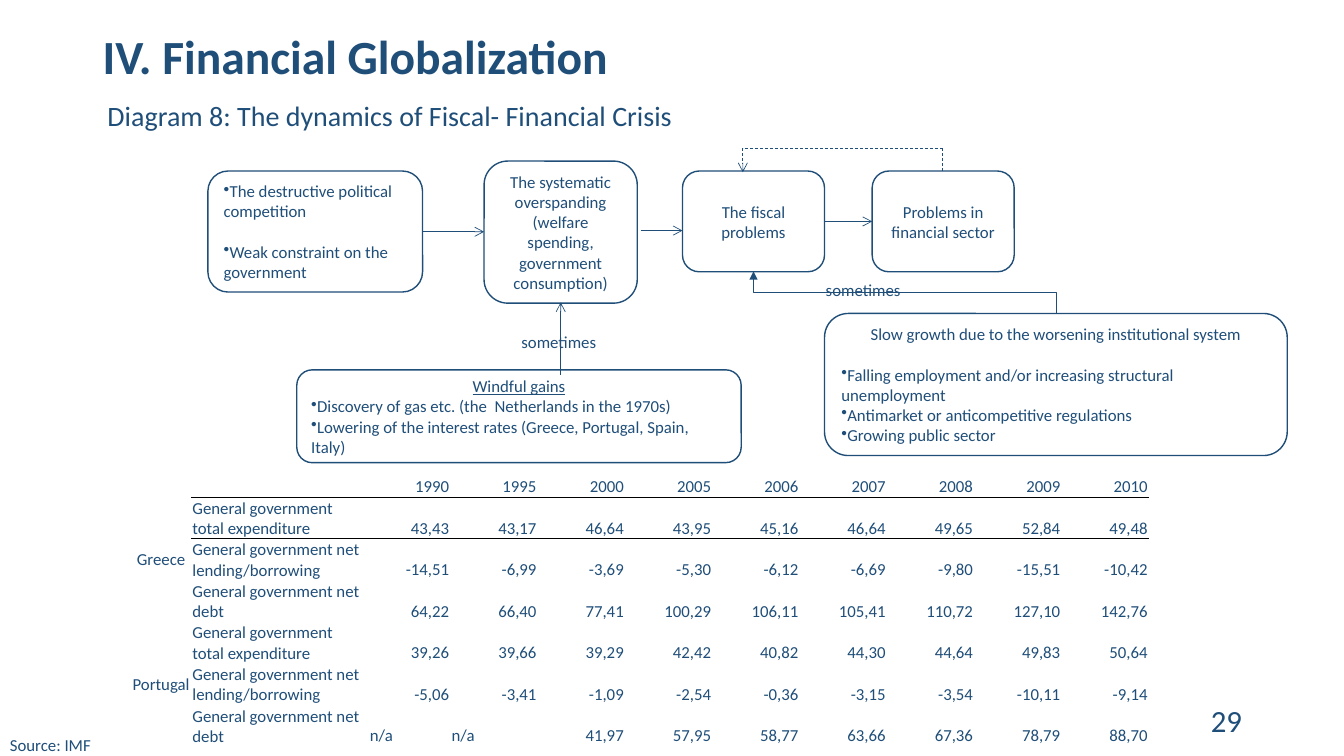
from lxml import etree
from pptx import Presentation, util as u
from pptx.dml.color import RGBColor
from pptx.enum import dml, shapes, text
from pptx.oxml import ns

COLORS = {"navy": "1F4E79", "white": "FFFFFF", "black": "000000"}
FONT = "Calibri"
LINE_GAP = 14.6
NO_STYLE = "{2D5ABB26-0587-4C30-8999-92F81FD0307C}"
LEFT, CENTER, RIGHT = text.PP_ALIGN.LEFT, text.PP_ALIGN.CENTER, text.PP_ALIGN.RIGHT
TOP, MIDDLE, BOTTOM = text.MSO_ANCHOR.TOP, text.MSO_ANCHOR.MIDDLE, text.MSO_ANCHOR.BOTTOM

YEARS = ["1990", "1995", "2000", "2005", "2006", "2007", "2008", "2009", "2010"]
MEASURES = ["General government total expenditure",
            "General government net lending/borrowing",
            "General government net debt"]
COUNTRIES = {
    "Greece": ["43,43 43,17 46,64 43,95 45,16 46,64 49,65 52,84 49,48",
               "-14,51 -6,99 -3,69 -5,30 -6,12 -6,69 -9,80 -15,51 -10,42",
               "64,22 66,40 77,41 100,29 106,11 105,41 110,72 127,10 142,76"],
    "Portugal": ["39,26 39,66 39,29 42,42 40,82 44,30 44,64 49,83 50,64",
                 "-5,06 -3,41 -1,09 -2,54 -0,36 -3,15 -3,54 -10,11 -9,14",
                 "n/a n/a 41,97 57,95 58,77 63,66 67,36 78,79 88,70"],
}


def color(name):
    """Return the named colour."""
    return RGBColor.from_string(COLORS[name])


def child(parent, tag, **attributes):
    """Append a drawing element with its attributes."""
    return etree.SubElement(parent, ns.qn(tag), attributes)


def write(frame, words, size=12, bold=None, underline=None, align=LEFT,
          bullet=False, before=0, spacing=None):
    """Write one paragraph, using the first one while it is empty."""
    para = frame.paragraphs[0] if not frame.text else frame.add_paragraph()
    para.alignment = align
    if before:
        para.space_before = u.Pt(before)
    if spacing:
        para.line_spacing = spacing
    if bullet:
        child(para._p.get_or_add_pPr(), "a:buChar", char="•")
    if not words:
        para._p.get_or_add_endParaRPr().set("sz", str(size * 100))
        return
    span = para.add_run()
    span.text = words
    font = span.font
    font.name, font.size, font.bold, font.underline = FONT, u.Pt(size), bold, underline
    font.color.rgb = color("navy")


def place(box, left, top, width, height):
    """Return lengths for a part offset from the corner of a box."""
    return [u.Cm(value) for value in (box[0] + left, box[1] + top, width, height)]


def add_label(page, bounds, words, anchor=TOP, **format):
    """Add a wrapped text box with one paragraph."""
    frame = page.shapes.add_textbox(*bounds).text_frame
    frame.word_wrap = True
    frame.vertical_anchor = anchor
    write(frame, words, **format)


def add_panel(page, bounds, kind=shapes.MSO_SHAPE.ROUNDED_RECTANGLE, outlined=True):
    """Add a white panel and return its text frame."""
    panel = page.shapes.add_shape(kind, *bounds)
    panel.shadow.inherit = False
    panel.fill.solid()
    panel.fill.fore_color.rgb = color("white")
    if outlined:
        panel.line.color.rgb = color("navy")
        panel.line.width = u.Pt(1)
    else:
        panel.line.fill.background()
    frame = panel.text_frame
    frame.word_wrap = True
    frame.vertical_anchor = MIDDLE
    return frame


def add_line(page, box, start, end, head=None, dashed=False,
             kind=shapes.MSO_CONNECTOR.STRAIGHT):
    """Add a thin connector between two points of a box."""
    points = [u.Cm(box[i] + point[i]) for point in (start, end) for i in (0, 1)]
    line = page.shapes.add_connector(kind, *points)
    line.line.color.rgb = color("navy")
    line.line.width = u.Pt(0.5)
    if dashed:
        line.line.dash_style = dml.MSO_LINE.DASH
    if head:
        child(line.line._get_or_add_ln(), "a:tailEnd", type=head)
    child(line._element.spPr, "a:effectLst")
    return line


def add_heading(page, box):
    """Place the title and the subtitle."""
    add_label(page, place(box, 0, 0, box[2], 1.68), "IV. Financial Globalization",
              size=34, bold=True, spacing=0.9)
    frame = add_panel(page, place(box, 0.12, 1.37, 17.15, 1.63),
                      shapes.MSO_SHAPE.RECTANGLE, outlined=False)
    write(frame, "Diagram 8: The dynamics of Fiscal- Financial Crisis", size=20)


def add_diagram(page, box):
    """Place the crisis diagram with its panels, arrows and labels."""
    centered, bulleted = {"align": CENTER}, {"bullet": True}
    spaced = {"bullet": True, "before": LINE_GAP}
    panels = [
        ((0, 0.58, 5.41, 3.05), [
            ("The destructive political competition", bulleted),
            ("Weak constraint on the government", spaced)]),
        ((6.96, 0.33, 3.86, 3.58), [
            ("The systematic overspanding (welfare spending, government consumption)", centered)]),
        ((2.24, 5.59, 11.2, 2.34), [
            ("Windful gains", {"align": CENTER, "underline": True}),
            ("Discovery of gas etc. (the  Netherlands in the 1970s)", bulleted),
            ("Lowering of the interest rates (Greece, Portugal, Spain, Italy)", bulleted)]),
        ((15.54, 4.17, 11.66, 3.58), [
            ("Slow growth due to the worsening institutional system", centered),
            ("Falling employment and/or increasing structural unemployment", spaced),
            ("Antimarket or anticompetitive regulations", bulleted),
            ("Growing public sector", bulleted)]),
        ((16.74, 0.58, 3.58, 2.54), [("Problems in financial sector", centered)]),
        ((11.96, 0.58, 3.58, 2.54), [("The fiscal problems", centered)]),
    ]
    for bounds, lines in panels:
        frame = add_panel(page, place(box, *bounds))
        for words, format in lines:
            write(frame, words, **format)

    arrows = [((5.41, 2.11), (6.96, 2.11)), ((10.92, 2.08), (11.96, 2.08)),
              ((15.54, 1.85), (16.74, 1.85)), ((8.89, 5.72), (8.89, 3.89))]
    for start, end in arrows:
        add_line(page, box, start, end, head="arrow")
    for bounds in [(7.65, 4.5, 4.04, 0.77), (15.32, 3.2, 4.47, 0.77)]:
        add_label(page, place(box, *bounds), "sometimes")

    feedback = [(18.52, 0.58), (18.52, 0), (13.48, 0), (13.48, 0.61)]
    for start, end in zip(feedback, feedback[1:]):
        add_line(page, box, start, end, dashed=True,
                 head="arrow" if end == feedback[-1] else None)
    elbow = add_line(page, box, (17.04, 7.44), (18.08, -0.18), head="triangle",
                     kind=shapes.MSO_CONNECTOR.ELBOW)
    elbow._element.spPr.find(ns.qn("a:xfrm")).set("rot", str(270 * 60000))


def fill_cell(cell, words, align, anchor, ruled):
    """Write a table cell, with a rule below it if asked."""
    cell.margin_left = cell.margin_right = cell.margin_top = u.Cm(0.03)
    cell.margin_bottom = 0
    cell.vertical_anchor = anchor
    cell.fill.solid()
    cell.fill.fore_color.rgb = color("white")
    write(cell.text_frame, words, align=align)
    if ruled:
        rule = etree.Element(ns.qn("a:lnB"), w=str(u.Pt(1)))
        child(child(rule, "a:solidFill"), "a:srgbClr", val=COLORS["black"])
        cell._tc.get_or_add_tcPr().insert(0, rule)


def add_figures(page, box):
    """Place the table of government finances."""
    rows = [["", ""] + YEARS]
    for country, series in COUNTRIES.items():
        for measure, values in zip(MEASURES, series):
            rows.append([country if measure == MEASURES[0] else "", measure] + values.split())
    frame = page.shapes.add_table(len(rows), len(rows[0]), *place(box, 0, 0, *box[2:]))
    table = frame.table
    table.first_row = table.horz_banding = False
    table._tbl.tblPr.find(ns.qn("a:tableStyleId")).text = NO_STYLE
    for column, width in zip(table.columns, [1.52, 4.47, 2.06] + [2.2] * 8):
        column.width = u.Cm(width)
    for r, values in enumerate(rows):
        table.rows[r].height = u.Cm(0.89 if r else 0.46)
        for c, words in enumerate(values):
            align = CENTER if c == 0 else LEFT if c == 1 or words == "n/a" else RIGHT
            fill_cell(table.cell(r, c), words, align, BOTTOM if c else MIDDLE, c > 0 and r < 2)
    for first in range(1, len(rows), len(MEASURES)):
        table.cell(first, 0).merge(table.cell(first + len(MEASURES) - 1, 0))


def add_footer(page, box):
    """Place the source and the page number."""
    add_label(page, place(box, 0, 0.74, 4.24, 0.77), "Source: IMF")
    add_label(page, place(box, 23.93, 0, 7.62, 1.02), "29", anchor=MIDDLE, size=22, align=RIGHT)


def main():
    """Build the slide and save it."""
    deck = Presentation()
    deck.slide_width, deck.slide_height = u.Cm(33.87), u.Cm(19.05)
    page = deck.slides.add_slide(deck.slide_layouts[6])
    add_heading(page, (2.34, 0.71, 29.21, 3))
    add_diagram(page, (5.24, 3.73, 27.2, 7.93))
    add_figures(page, (3.3, 11.99, 25.65, 5.8))
    add_footer(page, (0, 17.65, 33.87, 1.51))
    deck.save("out.pptx")


if __name__ == "__main__":
    main()
